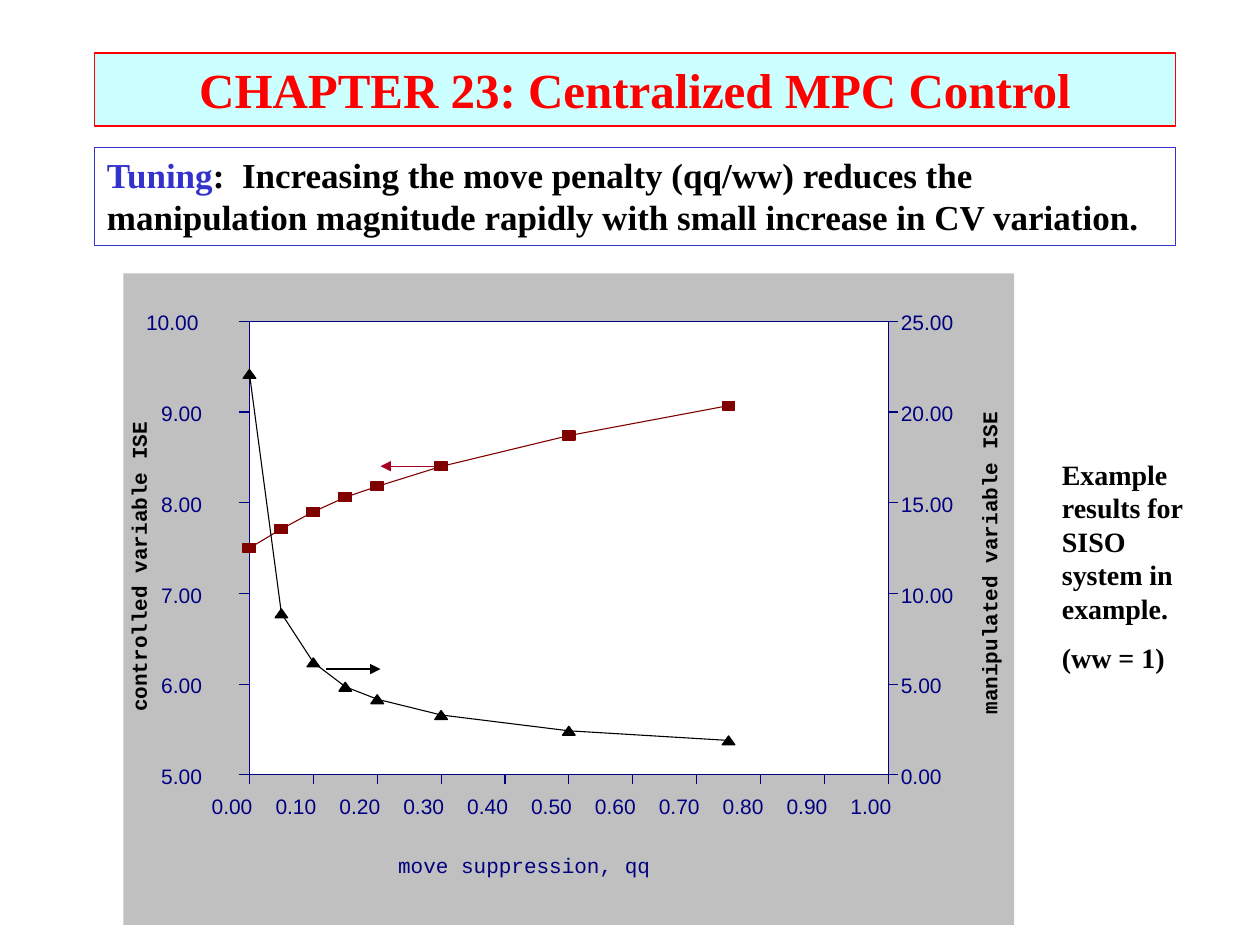
from dataclasses import dataclass

from lxml import etree
from pptx import Presentation
from pptx.dml.color import RGBColor
from pptx.enum.shapes import MSO_CONNECTOR, MSO_SHAPE
from pptx.enum.text import MSO_ANCHOR, MSO_AUTO_SIZE, PP_ALIGN
from pptx.oxml.ns import qn
from pptx.util import Inches, Pt

RECT, TRIANGLE = MSO_SHAPE.RECTANGLE, MSO_SHAPE.ISOSCELES_TRIANGLE
STRAIGHT = MSO_CONNECTOR.STRAIGHT
TOP = MSO_ANCHOR.TOP
LEFT, CENTER = PP_ALIGN.LEFT, PP_ALIGN.CENTER
NO_FIT = MSO_AUTO_SIZE.NONE

COLORS = {
    "black": "000000", "white": "FFFFFF", "red": "FF0000", "cyan": "CCFFFF",
    "blue": "3333CC", "navy": "000080", "maroon": "800000",
    "crimson": "A50021", "gray": "C0C0C0",
}
SERIF, SANS, MONO = "Times New Roman", "Arial", "Courier New"

# Plot area in inches
PLOT_LEFT, PLOT_RIGHT, PLOT_TOP, PLOT_BOTTOM = 1.98, 7.05, 2.55, 6.15
PLOT_W, PLOT_H = PLOT_RIGHT - PLOT_LEFT, PLOT_BOTTOM - PLOT_TOP
TICK = 0.08
MARKER_W, MARKER_H = 0.1, 0.07
MOVE_SUPPRESSION = (0, 0.05, 0.1, 0.15, 0.2, 0.3, 0.5, 0.75)


@dataclass(frozen=True)
class Axis:
    low: float
    high: float
    step: float
    tick_left: float
    label_left: float

    def y(self, value: float) -> float:
        return PLOT_BOTTOM - PLOT_H * (value - self.low) / (self.high - self.low)


@dataclass(frozen=True)
class Series:
    axis: Axis
    values: tuple[float, ...]
    color: str
    marker: int


@dataclass(frozen=True)
class Label:
    text: str
    box: tuple[float, float, float, float]
    color: str
    bold: bool = False
    rotation: int = 0


CV_AXIS = Axis(5, 10, 1, PLOT_LEFT - TICK, 1.28)
MV_AXIS = Axis(0, 25, 5, PLOT_RIGHT, 7.15)
SERIES = (
    Series(CV_AXIS, (7.5, 7.71, 7.9, 8.06, 8.18, 8.4, 8.74, 9.07), "maroon", RECT),
    Series(MV_AXIS, (22.1, 8.9, 6.2, 4.86, 4.17, 3.3, 2.43, 1.9), "black", TRIANGLE),
)
AXIS_TITLES = (
    Label("controlled variable ISE", (-0.06, 4.39, 2.32, 0.2), "black", True, 270),
    Label("manipulated variable ISE", (6.64, 4.36, 2.42, 0.2), "black", True, 270),
    Label("move suppression, qq", (3.16, 6.77, 2.01, 0.2), "navy"),
)


def rgb(name: str) -> RGBColor:
    return RGBColor.from_string(COLORS[name])


def write(tf, *paragraphs, size=12, font=SANS, bold=False, align=LEFT, gap=0,
          wrap=True, inset=None):
    """Fill a text frame; each paragraph is a sequence of (text, color) runs."""
    tf.word_wrap = wrap
    tf.auto_size = NO_FIT
    tf.vertical_anchor = TOP
    if inset is not None:
        tf.margin_left = tf.margin_right = Inches(inset)
        tf.margin_top = tf.margin_bottom = Inches(inset)
    for i, runs in enumerate(paragraphs):
        p = tf.add_paragraph() if i else tf.paragraphs[0]
        p.alignment = align
        p.space_before = Pt(gap if i else 0)
        for text, color in runs:
            r = p.add_run()
            r.text = text
            r.font.size, r.font.name, r.font.bold = Pt(size), font, bold
            r.font.color.rgb = rgb(color)


def style(sp, fill=None, line=None, width=0.75):
    if fill:
        sp.fill.solid()
        sp.fill.fore_color.rgb = rgb(fill)
    else:
        sp.fill.background()
    if line:
        sp.line.color.rgb = rgb(line)
        sp.line.width = Pt(width)
    else:
        sp.line.fill.background()


def add_box(shapes, kind, x, y, w, h, **look):
    sp = shapes.add_shape(kind, Inches(x), Inches(y), Inches(w), Inches(h))
    sp.shadow.inherit = False
    style(sp, **look)
    return sp


def add_line(shapes, x1, y1, x2, y2, color="navy", width=0.63, arrow=False):
    line = shapes.add_connector(STRAIGHT, Inches(x1), Inches(y1), Inches(x2), Inches(y2))
    line.line.color.rgb = rgb(color)
    line.line.width = Pt(width)
    sp_pr = line.element.spPr
    if arrow:
        etree.SubElement(sp_pr.find(qn("a:ln")), qn("a:tailEnd"), type="triangle")
    etree.SubElement(sp_pr, qn("a:effectLst"))


def add_text(shapes, box, *paragraphs, rotation=0, **fmt):
    sp = shapes.add_textbox(*map(Inches, box))
    sp.rotation = rotation
    write(sp.text_frame, *paragraphs, **fmt)


def add_number(shapes, value: float, x: float, y: float):
    text = f"{value:.2f}"
    width = 0.37 if len(text) == 4 else 0.46
    add_text(shapes, (x, y, width, 0.2), [(text, "navy")], wrap=False, inset=0)


def draw_value_axis(shapes, axis: Axis):
    for value in range(axis.low, axis.high + 1, axis.step):
        y = axis.y(value)
        add_line(shapes, axis.tick_left, y, axis.tick_left + TICK, y)
        # The widest number on the left axis starts further left
        shift = 0.12 if axis is CV_AXIS and value == 10 else 0
        add_number(shapes, value, axis.label_left - shift, y - 0.09)


def draw_suppression_axis(shapes):
    for i in range(11):
        x = PLOT_LEFT + PLOT_W * i / 10
        add_line(shapes, x, PLOT_BOTTOM + 0.07, x, PLOT_BOTTOM)
        add_number(shapes, i / 10, x - 0.3, 6.3)


def draw_series(shapes, series: Series):
    points = [(PLOT_LEFT + PLOT_W * q, series.axis.y(v))
              for q, v in zip(MOVE_SUPPRESSION, series.values)]
    for start, end in zip(points, points[1:]):
        add_line(shapes, *start, *end, color=series.color)
    for x, y in points:
        add_box(shapes, series.marker, x - MARKER_W / 2, y - MARKER_H / 2,
                MARKER_W, MARKER_H, fill=series.color, line=series.color, width=0)


def draw_plot(shapes):
    add_box(shapes, RECT, 0.98, 2.17, 7.07, 5.17, fill="gray")
    add_box(shapes, RECT, PLOT_LEFT, PLOT_TOP, PLOT_W, PLOT_H, fill="white")
    corners = [(PLOT_LEFT, PLOT_TOP), (PLOT_LEFT, PLOT_BOTTOM),
               (PLOT_RIGHT, PLOT_BOTTOM), (PLOT_RIGHT, PLOT_TOP)]
    for start, end in zip(corners, corners[1:] + corners[:1]):
        add_line(shapes, *start, *end)
    for axis in (CV_AXIS, MV_AXIS):
        draw_value_axis(shapes, axis)
    draw_suppression_axis(shapes)
    for t in AXIS_TITLES:
        add_text(shapes, t.box, [(t.text, t.color)], rotation=t.rotation,
                 font=MONO, bold=t.bold, wrap=False, inset=0)
    for series in SERIES:
        draw_series(shapes, series)
    add_line(shapes, 3.45, 3.7, 3.02, 3.7, color="crimson", width=0.75, arrow=True)
    add_line(shapes, 2.59, 5.31, 3.02, 5.31, color="black", width=0.75, arrow=True)


def main():
    prs = Presentation()
    prs.slide_width, prs.slide_height = Inches(10), Inches(7.5)
    s = prs.slides.add_slide(prs.slide_layouts[5])

    title = s.shapes.title
    title.left, title.top = Inches(0.75), Inches(0.42)
    title.width, title.height = Inches(8.58), Inches(0.58)
    style(title, fill="cyan", line="red")
    write(title.text_frame, [("CHAPTER 23: Centralized MPC Control", "red")],
          size=28, font=SERIF, bold=True, align=CENTER)

    draw_plot(s.shapes.add_group_shape().shapes)

    tuning = add_box(s.shapes, RECT, 0.75, 1.17, 8.58, 0.78, line="blue")
    write(tuning.text_frame,
          [("Tuning", "blue"),
           (":  Increasing the move penalty (qq/ww) reduces the manipulation "
            "magnitude rapidly with small increase in CV variation.", "black")],
          size=20, font=SERIF, bold=True)

    add_text(s.shapes, (8.33, 3.58, 1.33, 1.84),
             [("Example results for SISO system in example.", "black")],
             [("(ww = 1)", "black")],
             size=16, font=SERIF, bold=True, gap=9)
    prs.save("out.pptx")


if __name__ == "__main__":
    main()
